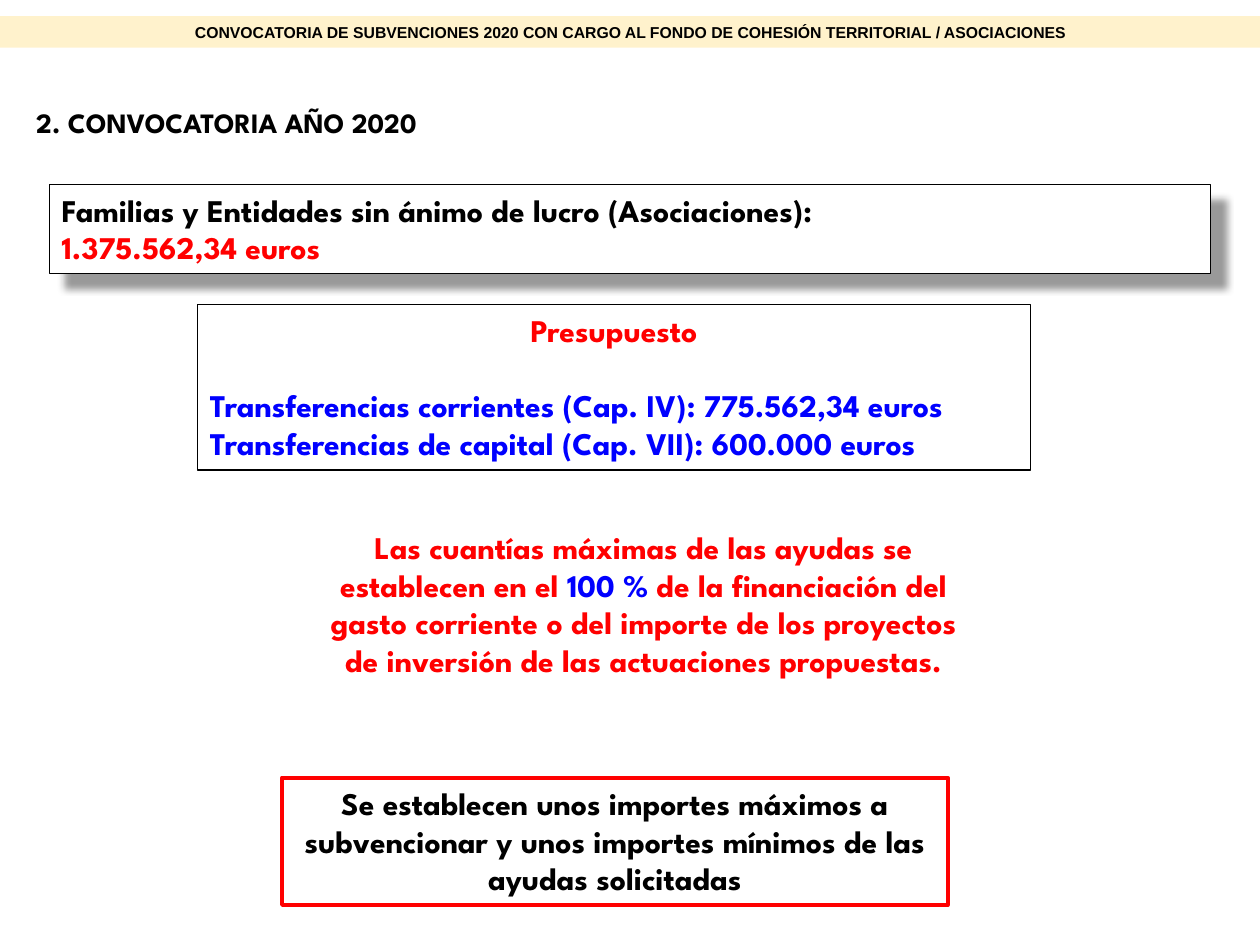
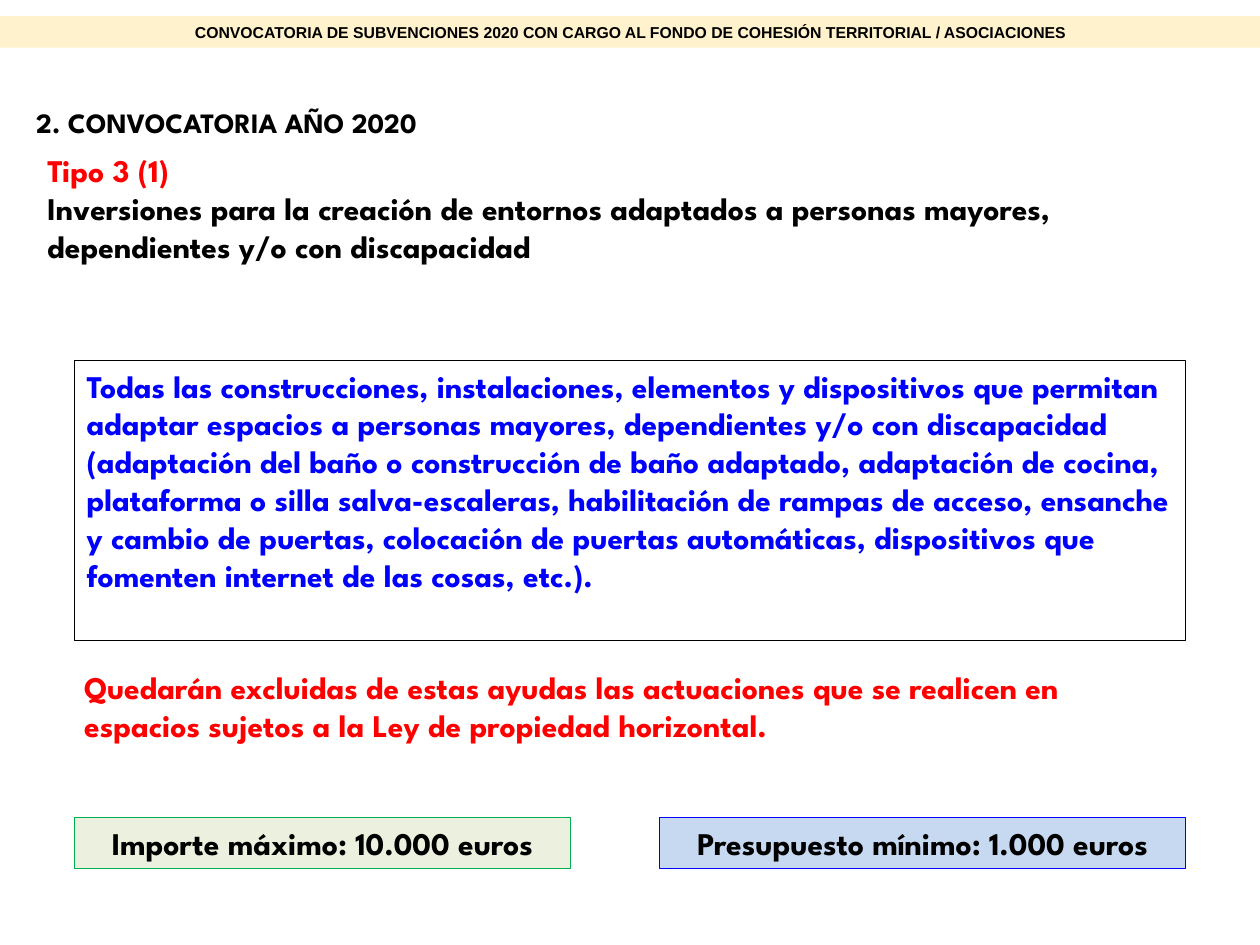
from lxml import etree
from pptx import Presentation
from pptx.dml.color import RGBColor
from pptx.enum import shapes, text
from pptx.oxml import ns
from pptx.util import Pt

BLACK = RGBColor(0, 0, 0)
WHITE = RGBColor(255, 255, 255)
RED = RGBColor(255, 0, 0)
BLUE = RGBColor(0, 0, 255)
GREEN = RGBColor(0x00, 0xB0, 0x50)
GOLD = RGBColor(0xFF, 0xC0, 0x00)
PALE = RGBColor(0xEB, 0xF1, 0xDE)
SKY = RGBColor(0xC6, 0xD9, 0xF1)

WIDE, HIGH = 720, 540
FACE, SIZE = "League Spartan", 18
LINE = 21.6  # height of one line of body text
LEFT, MID, JUST = (text.PP_ALIGN.LEFT, text.PP_ALIGN.CENTER,
                   text.PP_ALIGN.JUSTIFY)


def write(shape, paras, align=LEFT, face=FACE, size=SIZE):
    """Fill the shape with paragraphs, each a list of (words, colour) runs."""
    frame = shape.text_frame
    frame.word_wrap = True
    frame.vertical_anchor = text.MSO_ANCHOR.TOP
    for i, runs in enumerate(paras):
        para = frame.add_paragraph() if i else frame.paragraphs[0]
        para.alignment = align
        for words, tint in runs:
            run = para.add_run()
            run.text = words
            font = run.font
            font.name, font.size, font.bold = face, Pt(size), True
            font.color.rgb = tint
    return frame.paragraphs


def label(slide, box, paras, **style):
    """Add plain text with no frame."""
    return write(slide.shapes.add_textbox(*map(Pt, box)), paras, **style)


def panel(slide, box, fill=None, line=None, width=0.75):
    """Add a rectangle without a shadow."""
    shape = slide.shapes.add_shape(shapes.MSO_SHAPE.RECTANGLE, *map(Pt, box))
    shape.shadow.inherit = False
    if fill is None:
        shape.fill.background()
    else:
        shape.fill.solid()
        shape.fill.fore_color.rgb = fill
    if line is None:
        shape.line.fill.background()
    else:
        shape.line.color.rgb = line
        shape.line.width = Pt(width)
    return shape


def fade(color, part):
    """Set the opacity of a colour element, in percent."""
    etree.SubElement(color, ns.qn("a:alpha"), val=str(part * 1000))


def shade(shape):
    """Cast a soft shadow down to the right."""
    effect = shape.element.spPr.find(ns.qn("a:effectLst"))
    outer = etree.SubElement(
        effect, ns.qn("a:outerShdw"), blurRad=str(Pt(4)), dist=str(Pt(12)),
        dir=str(45 * 60000), algn="tl", rotWithShape="0")
    fade(etree.SubElement(outer, ns.qn("a:srgbClr"), val=str(BLACK)), 40)


def band(slide, box):
    shape = panel(slide, box, GOLD)
    fade(shape.element.spPr.find(".//" + ns.qn("a:srgbClr")), 20)
    write(shape, [[("CONVOCATORIA DE SUBVENCIONES 2020 CON CARGO AL FONDO DE "
                    "COHESIÓN TERRITORIAL / ASOCIACIONES", BLACK)]],
          MID, "Arial", 9)


def start(deck):
    """Add a blank slide with the shared band and heading."""
    slide = deck.slides.add_slide(deck.slide_layouts[6])
    band(slide, (0, 9.2, WIDE, 18))
    label(slide, (13.6, 56.9, 675.4, 26.6),
          [[("2. CONVOCATORIA AÑO 2020", BLACK)]], align=JUST, size=16)
    return slide


def total(slide, box):
    shape = panel(slide, box, WHITE, BLACK)
    shade(shape)
    write(shape, [
        [("Familias y Entidades sin ánimo de lucro (Asociaciones):", BLACK)],
        [("1.375.562,34 euros", RED)]])


def budget(slide, box):
    paras = write(panel(slide, box, line=BLACK), [
        [("Presupuesto", RED)],
        [("Transferencias corrientes (Cap. IV): 775.562,34 euros", BLUE)],
        [("Transferencias de capital (Cap. VII): 600.000 euros", BLUE)]])
    paras[0].alignment = MID
    paras[0].space_after = Pt(LINE)


def limits(slide, box):
    """Stack the aid ceiling and the framed note within the box."""
    left, top, width, height = box
    note, shift = 72.8, 16.4
    label(slide, (left + shift, top, width, 116.6), [[
        ("Las cuantías máximas de las ayudas se establecen en el ", RED),
        ("100 %", BLUE),
        (" de la financiación del gasto corriente o del importe de los "
         "proyectos de inversión de las actuaciones propuestas.", RED)]],
        align=MID)
    frame = panel(slide, (left, top + height - note, width, note),
                  line=RED, width=2.25)
    write(frame, [[("Se establecen unos importes máximos a subvencionar y "
                    "unos importes mínimos de las ayudas solicitadas",
                    BLACK)]], MID)


def kind(slide, box):
    label(slide, box, [
        [("Tipo 3 (1)", RED)],
        [("Inversiones para la creación de entornos adaptados a personas "
          "mayores, dependientes y/o con discapacidad", BLACK)]])


def scope(slide, box):
    """Place the eligible works in a frame, with the exclusion below."""
    left, top, width, height = box
    works = 160
    write(panel(slide, (left, top, width, works), line=BLACK), [[(
        "Todas las construcciones, instalaciones, elementos y dispositivos "
        "que permitan adaptar espacios a personas mayores, dependientes y/o "
        "con discapacidad (adaptación del baño o construcción de baño "
        "adaptado, adaptación de cocina, plataforma o silla salva-escaleras, "
        "habilitación de rampas de acceso, ensanche y cambio de puertas, "
        "colocación de puertas automáticas, dispositivos que fomenten "
        "internet de las cosas, etc.).", BLUE)]])
    ban = 51
    label(slide, (left - 1.4, top + height - ban, width, ban), [[(
        "Quedarán excluidas de estas ayudas las actuaciones que se realicen "
        "en espacios sujetos a la Ley de propiedad horizontal.", RED)]])


def sums(slide, box):
    """Set the two amounts at the left and right ends of the box."""
    left, top, width, height = box
    most, least = 283.8, 300.6
    for x, wide, words, fill, line in (
            (left, most, "Importe máximo: 10.000 euros", PALE, GREEN),
            (left + width - least, least, "Presupuesto mínimo: 1.000 euros",
             SKY, BLUE)):
        write(panel(slide, (x, top, wide, height), fill, line),
              [[(words, BLACK)]], MID)


def main():
    deck = Presentation()
    deck.slide_width, deck.slide_height = Pt(WIDE), Pt(HIGH)

    funds = start(deck)
    budget(funds, (112.8, 174, 476.2, 94.6))
    total(funds, (28.2, 105.4, 663.6, 50.8))
    limits(funds, (161.2, 298, 380.4, 219.2))

    care = start(deck)
    kind(care, (20, 83, 692.6, 72.8))
    scope(care, (42.4, 206, 635.2, 223))
    sums(care, (42.4, 467.2, 635.2, 29))

    deck.save("out.pptx")


if __name__ == "__main__":
    main()
